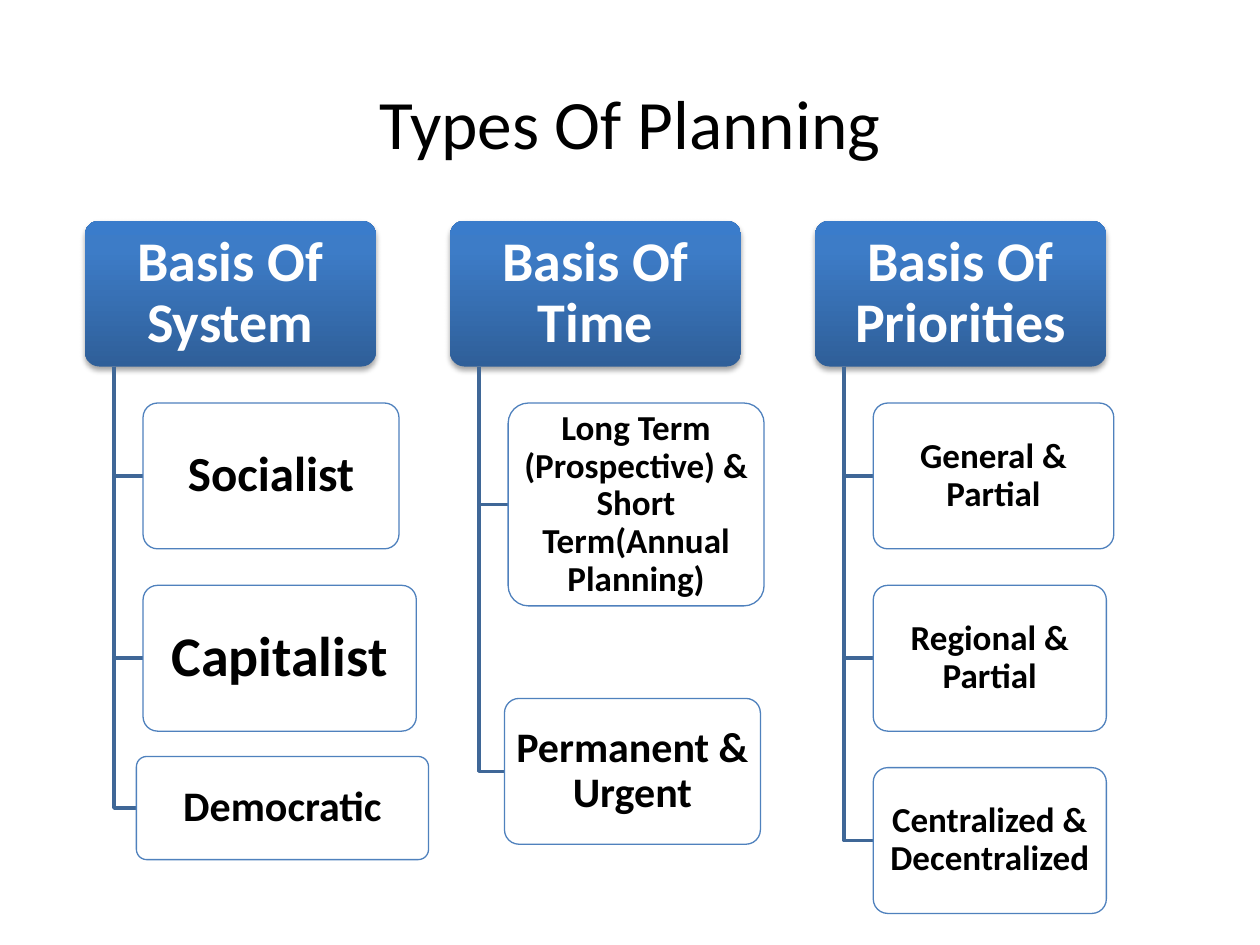
import pptx
import pptx.dml.color
import pptx.enum.shapes
import pptx.enum.text
import pptx.oxml
import pptx.oxml.ns
import pptx.util

Cm = pptx.util.Cm
Pt = pptx.util.Pt
RGBColor = pptx.dml.color.RGBColor

BLACK = RGBColor(0x00, 0x00, 0x00)
WHITE = RGBColor(0xFF, 0xFF, 0xFF)
BOX_LINE = RGBColor(0x4F, 0x81, 0xBD)
BRANCH = RGBColor(0x3F, 0x67, 0x97)
GRADIENT = (
    (0, RGBColor(0x2F, 0x5F, 0x99)),
    (80, RGBColor(0x3D, 0x7C, 0xC7)),
    (100, RGBColor(0x3A, 0x7C, 0xCB)),
)
NS = pptx.oxml.ns.nsdecls("a")

# Lengths in cm
LEFT, TOP, PITCH = 1.71, 4.45, 7.36
HEAD_W, HEAD_H = 5.87, 2.94
TRUNK = 0.1 * HEAD_W
INDENT = 0.2 * HEAD_W
ROW = 1.25 * HEAD_H

# Each column: heading, then (text, size, left, top, width, height) of its
# boxes, measured from the heading's top left corner
COLUMNS = (
    ("Basis Of System", (
        ("Socialist", 28, INDENT, ROW, 5.16, HEAD_H),
        ("Capitalist", 32, INDENT, 2 * ROW, 5.51, HEAD_H),
        ("Democratic", 24, 1.04, 10.8, 5.89, 2.08),
    )),
    ("Basis Of Time", (
        ("Long Term (Prospective) & Short Term(Annual Planning)", 20,
         INDENT, ROW, 5.16, 4.09),
        ("Permanent & Urgent", 24, 1.1, 9.63, 5.16, HEAD_H),
    )),
    ("Basis Of Priorities", (
        ("General & Partial", 20, INDENT, ROW, 4.85, HEAD_H),
        ("Regional & Partial", 20, INDENT, 2 * ROW, 4.7, HEAD_H),
        ("Centralized & Decentralized", 20, INDENT, 3 * ROW, 4.7, HEAD_H),
    )),
)


def write(sp, text, size, color, bold=True, spacing=0.9):
    """Set centred text, with insets in proportion to its size."""
    tf = sp.text_frame
    tf.word_wrap = True
    tf.vertical_anchor = pptx.enum.text.MSO_ANCHOR.MIDDLE
    tf.margin_left = tf.margin_right = Cm(size * 0.0053)
    tf.margin_top = tf.margin_bottom = Cm(size * 0.0035)
    p = tf.paragraphs[0]
    p.alignment = pptx.enum.text.PP_ALIGN.CENTER
    p.line_spacing = spacing
    r = p.add_run()
    r.text = text
    r.font.name = "Calibri"
    r.font.size = Pt(size)
    r.font.bold = bold
    r.font.color.rgb = color


def add_rounded(slide, x, y, w, h):
    sp = slide.shapes.add_shape(
        pptx.enum.shapes.MSO_SHAPE.ROUNDED_RECTANGLE,
        Cm(x), Cm(y), Cm(w), Cm(h))
    sp.adjustments[0] = 0.1
    sp.shadow.inherit = False
    return sp


def add_title(slide, x, y, w, h):
    sp = slide.shapes.add_textbox(Cm(x), Cm(y), Cm(w), Cm(h))
    write(sp, "Types Of Planning", 39.6, BLACK, bold=False, spacing=1.0)


def add_heading(slide, text, x, y):
    sp = add_rounded(slide, x, y, HEAD_W, HEAD_H)
    sp.line.fill.background()
    stops = "".join(
        f'<a:gs pos="{pos * 1000}"><a:srgbClr val="{color}"/></a:gs>'
        for pos, color in GRADIENT)
    sp_pr = sp._element.spPr
    sp_pr.find(pptx.oxml.ns.qn("a:prstGeom")).addnext(pptx.oxml.parse_xml(
        f'<a:gradFill {NS} rotWithShape="1"><a:gsLst>{stops}</a:gsLst>'
        '<a:lin ang="16200000" scaled="0"/></a:gradFill>'))
    sp_pr.find(pptx.oxml.ns.qn("a:effectLst")).append(pptx.oxml.parse_xml(
        f'<a:outerShdw {NS} blurRad="40000" dist="23000" dir="5400000" '
        'rotWithShape="0"><a:srgbClr val="000000"><a:alpha val="35000"/>'
        '</a:srgbClr></a:outerShdw>'))
    write(sp, text, 32, WHITE)


def add_branch(slide, x, top, right, bottom):
    """Draw a line down from (x, top), then across to (right, bottom)."""
    fb = slide.shapes.build_freeform(Cm(x), Cm(top))
    fb.add_line_segments(
        [(Cm(x), Cm(bottom)), (Cm(right), Cm(bottom))], close=False)
    sp = fb.convert_to_shape()
    sp.shadow.inherit = False
    sp.fill.background()
    sp.line.color.rgb = BRANCH
    sp.line.width = Pt(2)


def add_box(slide, text, size, x, y, w, h):
    sp = add_rounded(slide, x, y, w, h)
    sp.fill.solid()
    sp.fill.fore_color.rgb = WHITE
    color = sp._element.spPr.find(
        pptx.oxml.ns.qn("a:solidFill")).find(pptx.oxml.ns.qn("a:srgbClr"))
    color.append(pptx.oxml.parse_xml(f'<a:alpha {NS} val="90000"/>'))
    sp.line.color.rgb = BOX_LINE
    sp.line.width = Pt(0.75)
    write(sp, text, size, BLACK)


def add_column(slide, heading, boxes, x, y):
    add_heading(slide, heading, x, y)
    for text, size, dx, dy, w, h in boxes:
        add_branch(slide, x + TRUNK, y + HEAD_H, x + dx, y + dy + h / 2)
        add_box(slide, text, size, x + dx, y + dy, w, h)


def main():
    prs = pptx.Presentation()
    prs.slide_width, prs.slide_height = Cm(25.4), Cm(19.05)
    slide = prs.slides.add_slide(prs.slide_layouts[6])
    add_title(slide, 1.27, 1.47, 22.86, 1.98)
    for i, (heading, boxes) in enumerate(COLUMNS):
        add_column(slide, heading, boxes, LEFT + i * PITCH, TOP)
    prs.save("out.pptx")


if __name__ == "__main__":
    main()
